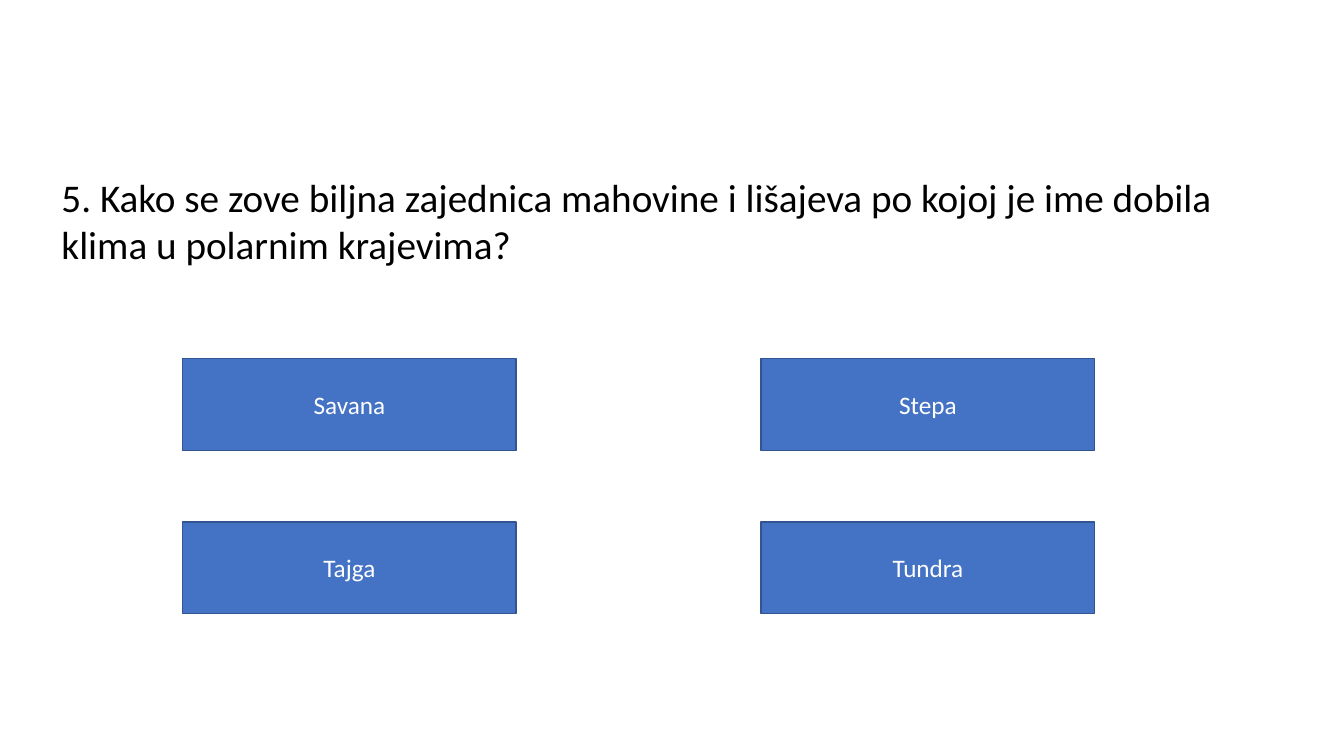
from pptx import Presentation
from pptx.dml.color import RGBColor
from pptx.enum.shapes import MSO_SHAPE as Preset
from pptx.enum.text import MSO_ANCHOR as Anchor, MSO_AUTO_SIZE as AutoSize, PP_ALIGN as Align
from pptx.util import Cm, Pt

COLOURS = {"text": "000000", "answer": "4472C4", "border": "325491", "label": "FFFFFF"}
QUESTION = ("5. Kako se zove biljna zajednica mahovine i lišajeva po kojoj je ime dobila "
            "klima u polarnim krajevima?")
ANSWERS = ["Savana", "Stepa", "Tajga", "Tundra"]
COLUMNS = 2
GRID_LEFT, GRID_TOP = 4.6, 9.04
COLUMN_STEP, ROW_STEP = 14.58, 4.11
ANSWER_WIDTH, ANSWER_HEIGHT = 8.41, 2.31


def colour(name):
    return RGBColor.from_string(COLOURS[name])


def apply(target, values):
    for name, value in values.items():
        setattr(target, name, value)


class QuizPage:
    font_name = "Calibri"

    def __init__(self, page):
        self.page = page

    def add_text(self, box, text, size, colour_name, frame_format, align):
        """Put one formatted paragraph into a box."""
        frame = box.text_frame
        apply(frame, {"word_wrap": True, **frame_format})
        para = frame.paragraphs[0]
        para.alignment = align
        span = para.add_run()
        span.text = text
        apply(span.font, {"name": self.font_name, "size": Pt(size)})
        span.font.color.rgb = colour(colour_name)

    def question(self, text, left, top, width, height):
        box = self.page.shapes.add_textbox(Cm(left), Cm(top), Cm(width), Cm(height))
        self.add_text(box, text, 28, "text", {"auto_size": AutoSize.SHAPE_TO_FIT_TEXT}, Align.LEFT)

    def answer(self, text, left, top):
        box = self.page.shapes.add_shape(
            Preset.RECTANGLE, Cm(left), Cm(top), Cm(ANSWER_WIDTH), Cm(ANSWER_HEIGHT))
        box.shadow.inherit = False
        box.fill.solid()
        box.fill.fore_color.rgb = colour("answer")
        box.line.color.rgb = colour("border")
        box.line.width = Pt(1)
        self.add_text(box, text, 18, "label", {"vertical_anchor": Anchor.MIDDLE}, Align.CENTER)


def main():
    deck = Presentation()
    apply(deck, {"slide_width": Cm(33.87), "slide_height": Cm(19.05)})
    quiz = QuizPage(deck.slides.add_slide(deck.slide_layouts[6]))
    quiz.question(QUESTION, 1.3, 4.24, 31.65, 2.64)
    for index, text in enumerate(ANSWERS):
        row, column = divmod(index, COLUMNS)
        quiz.answer(text, GRID_LEFT + column * COLUMN_STEP, GRID_TOP + row * ROW_STEP)
    deck.save("out.pptx")


if __name__ == "__main__":
    main()
